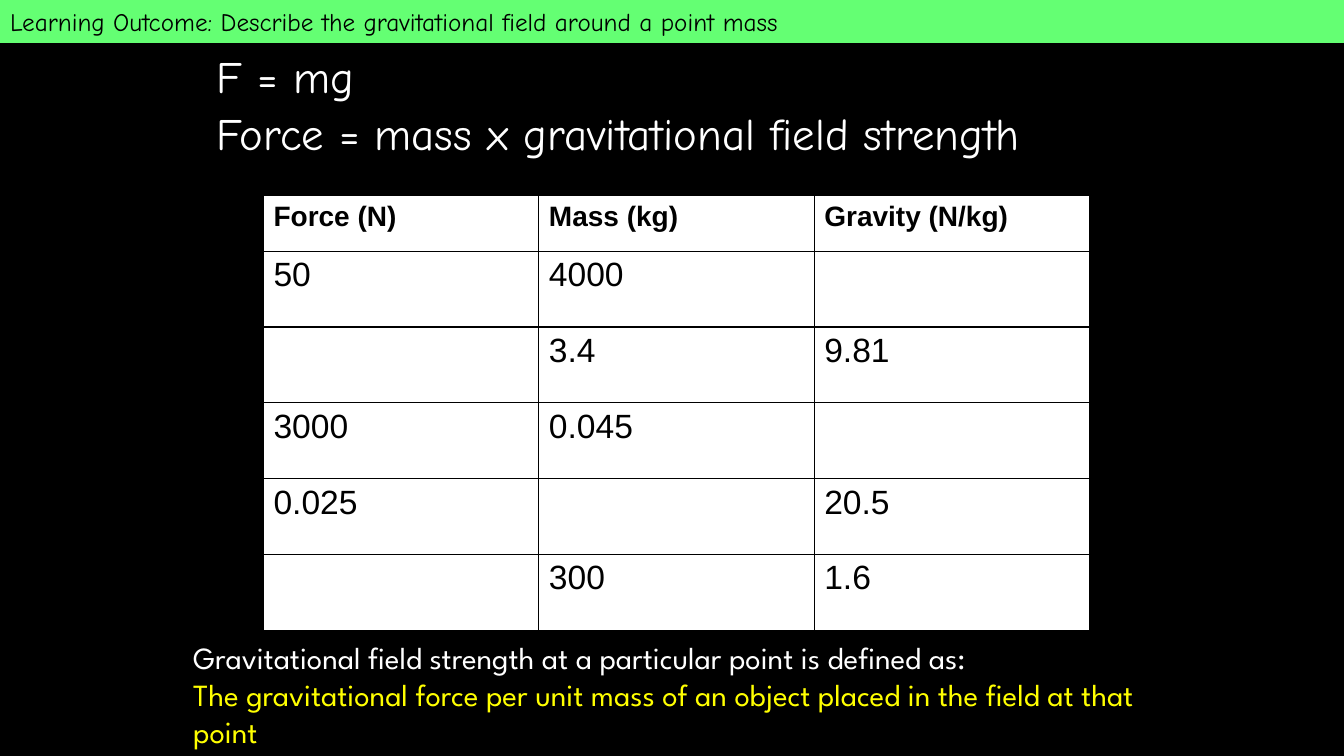
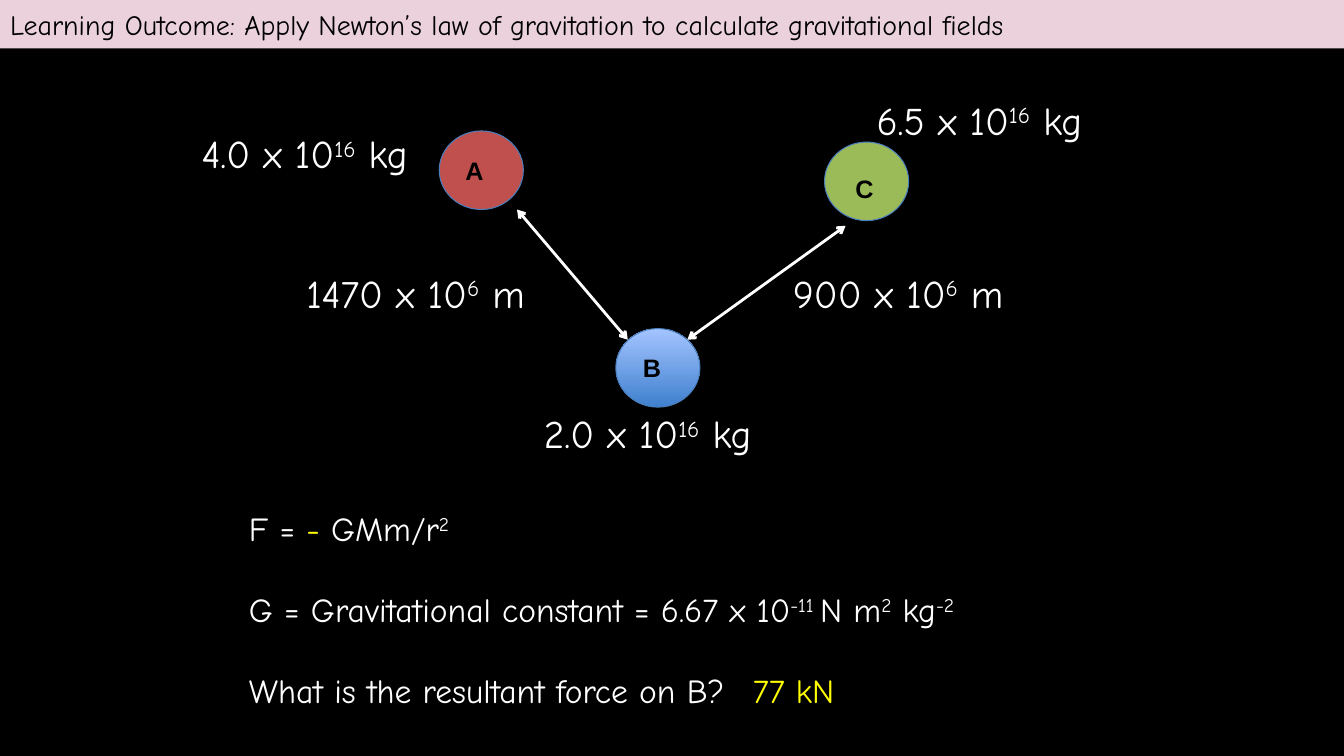
from lxml import etree
from pptx import Presentation
from pptx.dml.color import RGBColor
from pptx.enum.shapes import MSO_CONNECTOR, MSO_SHAPE
from pptx.enum.text import MSO_ANCHOR, MSO_AUTO_SIZE, PP_ALIGN
from pptx.oxml.ns import qn
from pptx.util import Cm, Pt

STRAIGHT, OVAL = MSO_CONNECTOR.STRAIGHT, MSO_SHAPE.OVAL
TOP, MIDDLE, LEFT = MSO_ANCHOR.TOP, MSO_ANCHOR.MIDDLE, PP_ALIGN.LEFT
NO_FIT = MSO_AUTO_SIZE.NONE

BLACK, WHITE, YELLOW = "000000", "FFFFFF", "FFFF00"
GREEN_BAND, PINK_BAND = "64FF73", "EAD1DC"
BALL_EDGE = "4B7EBC"
HAND, SANS, ROUND = "Comic Neue", "Arial", "League Spartan"
SLIDE_WIDTH = 33.87

rgb = RGBColor.from_string


def write(paragraph, parts, size, font=HAND, bold=False):
    """Add (text, colour) parts as runs; text between carets is superscript."""
    for text, color in parts:
        for index, piece in enumerate(text.split("^")):
            if not piece:
                continue
            run = paragraph.add_run()
            run.text = piece
            run.font.size = Pt(size)
            run.font.name = font
            run.font.bold = bold
            run.font.color.rgb = rgb(color)
            if index % 2:
                run.font._element.set("baseline", "30000")


def start_slide(outcome, band_color, band_height, size, lines, box, line_size):
    """Add a slide with its outcome band and a list without bullets."""
    slide = prs.slides.add_slide(prs.slide_layouts[1])
    band, body = slide.placeholders
    band.left, band.top = Cm(0), Cm(0)
    band.width, band.height = Cm(SLIDE_WIDTH), Cm(band_height)
    band.fill.solid()
    band.fill.fore_color.rgb = rgb(band_color)
    band.text_frame.auto_size = NO_FIT
    band.text_frame.vertical_anchor = MIDDLE
    heading = band.text_frame.paragraphs[0]
    heading.alignment = LEFT
    write(heading, [("Learning Outcome: " + outcome, BLACK)], size)

    body.left, body.top, body.width, body.height = map(Cm, box)
    frame = body.text_frame
    frame.auto_size = NO_FIT
    frame.margin_top = frame.margin_bottom = Cm(0.25)
    for index, parts in enumerate(lines):
        paragraph = frame.paragraphs[0] if index == 0 else frame.add_paragraph()
        properties = paragraph._p.get_or_add_pPr()
        properties.set("marL", "0")
        properties.set("indent", "0")
        etree.SubElement(properties, qn("a:buNone"))
        paragraph.space_before = Pt(0)
        write(paragraph, parts, line_size)
    return slide, frame


prs = Presentation()
prs.slide_width, prs.slide_height = Cm(SLIDE_WIDTH), Cm(19.05)
prs.slide_master.background.fill.solid()
prs.slide_master.background.fill.fore_color.rgb = rgb(BLACK)

# Slide 1: field strength
slide, formulas = start_slide(
    "Describe the gravitational field around a point mass", GREEN_BAND, 1.08, 18,
    [[("F = mg", WHITE)], [("Force = mass x gravitational field strength", WHITE)]],
    (4.62, 1.12, 24.51, 3.4), 32)
formulas.margin_left = Cm(0.84)
formulas.vertical_anchor = TOP
for paragraph in formulas.paragraphs:
    paragraph.line_spacing = 0.9
formulas.paragraphs[1].space_before = Pt(6.4)

rows = [
    ("Force (N)", "Mass (kg)", "Gravity (N/kg)"),
    ("50", "4000", ""),
    ("", "3.4", "9.81"),
    ("3000", "0.045", ""),
    ("0.025", "", "20.5"),
    ("", "300", "1.6"),
]
table = slide.shapes.add_table(len(rows), 3, Cm(6.64), Cm(4.93), Cm(20.82), Cm(10.95)).table
table.first_row = table.horz_banding = False
for column in table.columns:
    column.width = Cm(6.94)
for row_index, values in enumerate(rows):
    is_header = row_index == 0
    table.rows[row_index].height = Cm(1.4 if is_header else 1.91)
    for column_index, value in enumerate(values):
        cell = table.cell(row_index, column_index)
        write(cell.text_frame.paragraphs[0], [(value, BLACK)],
              20 if is_header else 24, SANS, is_header)
        properties = cell._tc.get_or_add_tcPr()
        for side in ("a:lnL", "a:lnR", "a:lnT", "a:lnB"):
            border = etree.SubElement(properties, qn(side), w=str(Pt(1)))
            border_fill = etree.SubElement(border, qn("a:solidFill"))
            etree.SubElement(border_fill, qn("a:srgbClr"), val=BLACK)
        cell.fill.solid()
        cell.fill.fore_color.rgb = rgb(WHITE)

definition = slide.shapes.add_textbox(Cm(4.62), Cm(15.98), Cm(24.82), Cm(3.07)).text_frame
definition.word_wrap = True
write(definition.paragraphs[0],
      [("Gravitational field strength at a particular point is defined as:", WHITE)], 22, ROUND)
write(definition.add_paragraph(),
      [("The gravitational force per unit mass of an object placed in the field at that point",
        YELLOW)], 22, ROUND)

# Slide 2: three masses
slide, equations = start_slide(
    "Apply Newton’s law of gravitation to calculate gravitational fields", PINK_BAND, 1.22, 20,
    [[("F = ", WHITE), ("- ", YELLOW), ("GMm/r^2^", WHITE)],
     [("G = Gravitational constant = 6.67 x 10^-11 ^N m^2^ kg^-2^", WHITE)],
     [("What is the resultant force on B?\t", WHITE), ("77 kN", YELLOW)]],
    (6.02, 12.6, 21.56, 5.5), 24)
equations.vertical_anchor = MIDDLE
for paragraph in equations.paragraphs[1:]:
    paragraph.space_before = Pt(29)
tabs = etree.SubElement(equations.paragraphs[2]._p.pPr, qn("a:tabLst"))
etree.SubElement(tabs, qn("a:tab"), pos=str(Cm(12.55)), algn="l")

quantities = [
    ("4.0 x 10^16^ kg", 4.83, 3.02),
    ("6.5 x 10^16^ kg", 21.84, 2.18),
    ("900 x 10^6^ m", 19.74, 6.53),
    ("1470 x 10^6^ m", 7.47, 6.53),
    ("2.0 x 10^16^ kg", 13.46, 10.08),
]
for quantity, left, top in quantities:
    frame = slide.shapes.add_textbox(Cm(left), Cm(top), Cm(7.19), Cm(1.68)).text_frame
    frame.word_wrap = True
    frame.vertical_anchor = MIDDLE
    write(frame.paragraphs[0], [(quantity, WHITE)], 28)

# name, colours from bottom to top, ball position, letter position
masses = [
    ("B", ("3F80CE", "A4C4FF"), (15.52, 8.28), (15.95, 8.76)),
    ("C", ("9BBB59",), (20.78, 3.58), (21.31, 4.24)),
    ("A", ("C0504D",), (11.07, 3.3), (11.48, 3.78)),
]
for name, colors, ball_at, letter_at in masses:
    ball = slide.shapes.add_shape(OVAL, *map(Cm, ball_at), Cm(2.12), Cm(1.98))
    ball.shadow.inherit = False
    ball.line.color.rgb = rgb(BALL_EDGE)
    ball.line.width = Pt(0.75)
    if len(colors) > 1:
        ball.fill.gradient()
        ball.fill.gradient_angle = 90
        for stop, color in zip(ball.fill.gradient_stops, colors):
            stop.color.rgb = rgb(color)
    else:
        ball.fill.solid()
        ball.fill.fore_color.rgb = rgb(colors[0])
    letter = slide.shapes.add_textbox(*map(Cm, letter_at), Cm(1.55), Cm(1.02)).text_frame
    letter.word_wrap = True
    write(letter.paragraphs[0], [(name, BLACK)], 18, SANS, True)

distances = [(13.03, 5.28, 15.82, 8.56), (21.31, 5.69, 17.32, 8.56)]
for ends in distances:
    distance = slide.shapes.add_connector(STRAIGHT, *map(Cm, ends))
    distance.line.color.rgb = rgb(WHITE)
    distance.line.width = Pt(2)
    outline = distance.line._get_or_add_ln()
    for end in ("a:headEnd", "a:tailEnd"):
        etree.SubElement(outline, qn(end), type="arrow")
    etree.SubElement(distance._element.spPr, qn("a:effectLst"))

prs.save("out.pptx")
